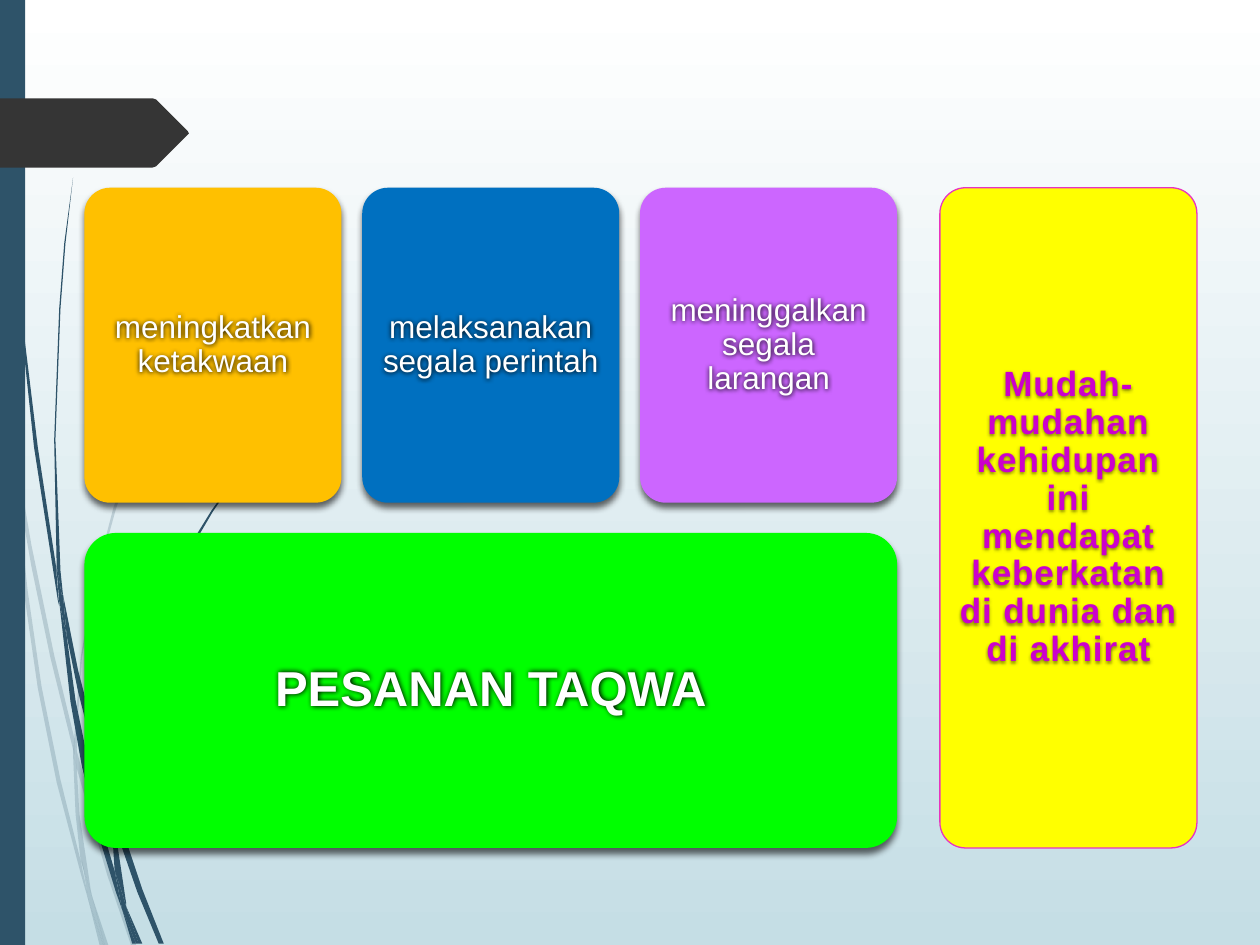
from lxml.etree import SubElement
from pptx import Presentation
from pptx.dml.color import RGBColor
from pptx.enum.shapes import MSO_SHAPE
from pptx.enum.text import MSO_ANCHOR, PP_ALIGN
from pptx.oxml.ns import qn
from pptx.util import Inches, Pt

SLATE, CHARCOAL = "2E5369", "353535"
TOP, BOTTOM, GROUP_LEFT = 1.49, 6.73, 0.67
TILE_WIDTH, TILE_HEIGHT, GROUP_WIDTH = 2.04, 2.5, 6.45
CORNER = 0.1
TEXT_INSET = CORNER * (1 - 0.5 ** 0.5)  # share of the short side kept clear by the corner

BOX_SHADOW = {"alpha": 60, "blur": 4, "distance": 3}
HALO = {"alpha": 100, "blur": 3, "distance": 0}
SOFT_SHADOW = {"alpha": 50, "blur": 2, "distance": 0.7}

TILES = [
    ("meningkatkan ketakwaan", "FFC000"),
    ("melaksanakan segala perintah", "0070C0"),
    ("meninggalkan segala larangan", "CC66FF"),
]

PALE_STRANDS = [
    [(0.4, 5.22), (0.59, 5.99), (0.59, 5.86), (0.43, 5.2), (0.25, 4.33), (0.1, 3.45),
     (0.12, 3.76), (0.25, 4.5)],
    [(0.64, 6.07), (0.61, 5.96), (0.61, 6.1), (0.85, 6.94), (1.04, 7.5), (1.08, 7.5),
     (0.88, 6.92)],
    [(0.83, 7.5), (0.86, 7.5), (0.73, 7.11)],
    [(0.64, 6.83), (0.48, 6.19), (0.33, 5.45), (0.22, 4.69), (0.12, 3.76), (0.08, 3.5),
     (0.19, 4.7), (0.3, 5.46), (0.45, 6.21), (0.64, 6.93), (0.7, 7.14), (0.69, 7.07)],
    [(0.58, 5.99), (0.6, 6.46), (0.64, 6.83), (0.67, 6.92), (0.73, 7.11), (0.72, 7.06),
     (0.63, 6.46), (0.61, 6.1), (0.61, 6.08)],
    [(0.61, 5.84), (0.65, 5.22), (0.76, 4.62), (0.92, 4.04), (1.11, 3.49), (1.34, 2.95),
     (1.59, 2.45), (1.87, 1.98), (2.01, 1.75), (2.17, 1.54), (2.17, 1.53), (2.01, 1.75),
     (1.86, 1.97), (1.58, 2.44), (1.33, 2.94), (1.1, 3.48), (0.9, 4.03), (0.75, 4.61),
     (0.64, 5.22), (0.59, 5.84), (0.59, 5.86), (0.61, 5.96)],
    [(0.7, 7.14), (0.79, 7.5), (0.82, 7.5)],
    [(0.61, 6.08), (0.61, 6.1), (0.61, 5.96), (0.59, 5.86), (0.58, 5.99)],
    [(0.67, 6.92), (0.65, 6.83), (0.69, 7.07), (0.7, 7.14), (0.82, 7.5), (0.83, 7.5),
     (0.73, 7.11)],
]
DARK_STRANDS = [
    [(0.05, 1.1), (0.14, 2.33), (0.27, 3.55), (0.46, 4.77), (0.47, 4.81), (0.45, 4.57),
     (0.45, 4.53), (0.3, 3.55), (0.15, 2.32), (0.06, 1.09), (0.04, 0.48), (0.03, 0),
     (0.02, 0), (0.03, 0.48)],
    [(0.73, 5.92), (0.88, 6.45), (0.88, 6.33), (0.88, 6.31), (0.77, 5.9), (0.62, 5.32),
     (0.5, 4.72), (0.53, 5.05), (0.62, 5.49)],
    [(0.94, 6.49), (0.91, 6.41), (0.91, 6.56), (1.09, 7.08), (1.26, 7.49), (1.3, 7.49),
     (1.13, 7.06)],
    [(0.91, 6.91), (0.81, 6.57), (0.6, 5.56), (0.53, 5.05), (0.47, 4.77), (0.56, 5.57),
     (0.65, 6.08), (0.77, 6.59), (0.92, 7.08), (0.97, 7.22), (0.96, 7.17)],
    [(0.5, 4.72), (0.48, 4.53), (0.44, 3.49), (0.48, 2.45), (0.52, 1.93), (0.58, 1.41),
     (0.51, 1.93), (0.47, 2.45), (0.43, 3.49), (0.45, 4.49), (0.49, 4.72)],
    [(1.1, 7.49), (1.13, 7.49), (1, 7.19)],
    [(0.47, 4.77), (0.53, 5.05), (0.5, 4.72), (0.49, 4.72), (0.45, 4.49), (0.45, 4.53)],
    [(0.91, 6.33), (0.95, 5.92), (1.03, 5.52), (1.15, 5.13), (1.31, 4.76), (1.49, 4.4),
     (1.69, 4.06), (1.91, 3.74), (2.03, 3.59), (2.16, 3.44), (2.15, 3.44), (2.03, 3.58),
     (1.91, 3.73), (1.68, 4.05), (1.47, 4.39), (1.29, 4.74), (1.13, 5.12), (1.01, 5.51),
     (0.93, 5.91), (0.88, 6.31), (0.91, 6.41)],
    [(0.97, 7.22), (1.05, 7.49), (1.08, 7.49)],
    [(0.88, 6.45), (0.91, 6.91), (0.96, 7.06), (1, 7.19), (1, 7.16), (0.91, 6.56),
     (0.9, 6.51)],
    [(0.96, 7.06), (0.91, 6.91), (0.96, 7.17), (0.97, 7.22), (1.08, 7.49), (1.1, 7.49),
     (1, 7.19)],
]
ARROW = [(0, 0.78), (1.21, 0.78), (1.24, 0.79), (1.49, 1.04), (1.5, 1.06), (1.49, 1.07),
         (1.24, 1.32), (1.21, 1.33), (0, 1.33)]


def color(hex_value):
    return RGBColor.from_string(hex_value)


def set_all(target, values):
    for name, value in values.items():
        setattr(target, name, value)


class SlideBuilder:
    font_name = "Arial"

    def __init__(self, slide):
        self.slide = slide
        self.shapes = slide.shapes

    def background(self, *stop_colors):
        fill = self.slide.background.fill
        fill.gradient()
        fill.gradient_angle = 270
        for stop, hex_value in zip(fill.gradient_stops, stop_colors):
            stop.color.rgb = color(hex_value)

    def paint(self, shape, fill, line=None):
        shape.fill.solid()
        shape.fill.fore_color.rgb = color(fill)
        if line:
            shape.line.color.rgb = color(line)
            shape.line.width = Pt(0.75)
        else:
            shape.line.fill.background()
        shape.shadow.inherit = False

    def cast_shadow(self, shape, alpha, blur, distance):
        shape.shadow.inherit = False
        effects = shape._element.spPr.find(qn("a:effectLst"))
        shadow = SubElement(effects, qn("a:outerShdw"), blurRad=str(Pt(blur)),
                            dist=str(Pt(distance)), dir="5400000", rotWithShape="0")
        black = SubElement(shadow, qn("a:srgbClr"), val="000000")
        SubElement(black, qn("a:alpha"), val=str(alpha * 1000))

    def outline(self, points, fill, alpha=None):
        """Draw a closed, filled outline through points given in inches."""
        start, *others = [(Inches(x), Inches(y)) for x, y in points]
        builder = self.shapes.build_freeform(*start)
        builder.add_line_segments(others, close=True)
        shape = builder.convert_to_shape()
        self.paint(shape, fill)
        if alpha:
            solid = shape._element.spPr.find(qn("a:solidFill"))
            SubElement(solid[0], qn("a:alpha"), val=str(alpha * 1000))

    def box(self, preset, left, top, width, height, fill, line=None):
        shape = self.shapes.add_shape(preset, *map(Inches, (left, top, width, height)))
        self.paint(shape, fill, line)
        return shape

    def card(self, text, left, top, width, height, fill, font, margin,
             line=None, text_shadow=HALO, spacing=None):
        """Draw a rounded card and its shadowed caption."""
        card = self.box(MSO_SHAPE.ROUNDED_RECTANGLE, left, top, width, height, fill, line)
        card.adjustments[0] = CORNER
        if not line:
            self.cast_shadow(card, **BOX_SHADOW)

        inset = TEXT_INSET * min(width, height)
        caption = self.shapes.add_textbox(*map(Inches, (
            left + inset, top + inset, width - 2 * inset, height - 2 * inset)))
        self.cast_shadow(caption, **text_shadow)
        frame = caption.text_frame
        set_all(frame, {"word_wrap": True, "vertical_anchor": MSO_ANCHOR.MIDDLE})
        sides = ("left", "top", "right", "bottom")
        set_all(frame, {f"margin_{side}": Inches(margin) for side in sides})
        paragraph = frame.paragraphs[0]
        set_all(paragraph, {"alignment": PP_ALIGN.CENTER, "line_spacing": 0.9})
        run = paragraph.add_run()
        run.text = text
        run.font.color.rgb = color(font.get("color", "FFFFFF"))
        set_all(run.font, {"name": self.font_name, "size": Pt(font["size"]),
                           "bold": font.get("bold", False)})
        if spacing:
            run._r.get_or_add_rPr().set("spc", str(int(spacing * 100)))


def main():
    presentation = Presentation()
    set_all(presentation, {"slide_width": Inches(10), "slide_height": Inches(7.5)})
    builder = SlideBuilder(presentation.slides.add_slide(presentation.slide_layouts[6]))

    builder.background("FFFFFF", "C5DEE5")
    for strand in PALE_STRANDS:
        builder.outline(strand, SLATE, alpha=20)
    for strand in DARK_STRANDS:
        builder.outline(strand, SLATE)
    builder.box(MSO_SHAPE.RECTANGLE, 0, 0, 0.2, 7.5, SLATE)
    builder.outline(ARROW, CHARCOAL)

    builder.card("PESANAN TAQWA", GROUP_LEFT, BOTTOM - TILE_HEIGHT, GROUP_WIDTH,
                 TILE_HEIGHT, "00FF00", {"size": 28, "bold": True}, 0.12)
    pitch = (GROUP_WIDTH - TILE_WIDTH) / (len(TILES) - 1)
    for index, (text, fill) in enumerate(TILES):
        builder.card(text, GROUP_LEFT + index * pitch, TOP, TILE_WIDTH, TILE_HEIGHT,
                     fill, {"size": 18}, 0.08)
    builder.card("Mudah-mudahan kehidupan ini mendapat keberkatan di dunia dan di akhirat",
                 7.46, TOP, TILE_WIDTH, BOTTOM - TOP, "FFFF00",
                 {"size": 20, "bold": True, "color": "CC00CC"}, 0.08,
                 line="E833BF", text_shadow=SOFT_SHADOW, spacing=0.5)

    presentation.save("out.pptx")


if __name__ == "__main__":
    main()
